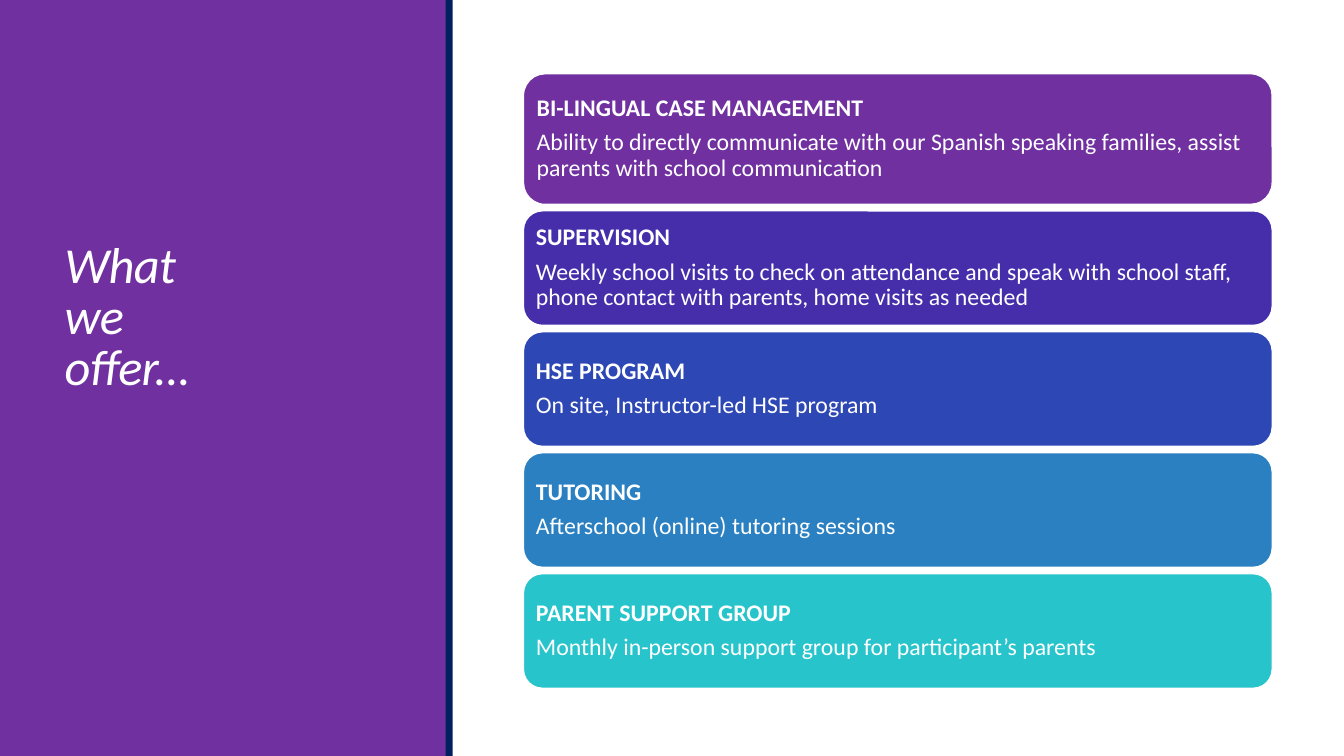
from dataclasses import dataclass

from pptx import Presentation
from pptx.dml.color import RGBColor
from pptx.enum.shapes import MSO_SHAPE
from pptx.enum.text import MSO_ANCHOR, MSO_AUTO_SIZE, PP_ALIGN
from pptx.oxml.ns import qn
from pptx.util import Inches, Pt


@dataclass(frozen=True)
class Theme:
    font: str = "Calibri"
    purple: str = "7030A0"
    navy: str = "002060"
    white: str = "FFFFFF"
    card_fills: tuple = ("7030A0", "462EAB", "2D47B5", "2A80C1", "28C4CC")
    title_size: int = 36
    card_size: int = 17


THEME = Theme()

OFFERS = [
    ("BI-LINGUAL CASE MANAGEMENT",
     "Ability to directly communicate with our Spanish speaking families, "
     "assist parents with school communication"),
    ("SUPERVISION",
     "Weekly school visits to check on attendance and speak with school staff, "
     "phone contact with parents, home visits as needed"),
    ("HSE PROGRAM", "On site, Instructor-led HSE program"),
    ("TUTORING", "Afterschool (online) tutoring sessions"),
    ("PARENT SUPPORT GROUP",
     "Monthly in-person support group for participant’s parents"),
]

CARD_LEFT, CARD_TOP, CARD_WIDTH = 5.19, 0.73, 7.43
FIRST_CARD_HEIGHT, CARD_HEIGHT, CARD_GAP = 1.3, 1.14, 0.06
CARD_INSET = 0.07


def add_block(slide, preset, left, top, width, height, fill):
    shape = slide.shapes.add_shape(
        preset, Inches(left), Inches(top), Inches(width), Inches(height))
    shape.shadow.inherit = False
    shape.fill.solid()
    shape.fill.fore_color.rgb = RGBColor.from_string(fill)
    shape.line.fill.background()
    return shape


def format_paragraph(paragraph, size, line_spacing, bold=False, italic=False):
    paragraph.alignment = PP_ALIGN.LEFT
    paragraph.line_spacing = line_spacing
    font = paragraph.font
    font.name = THEME.font
    font.size = Pt(size)
    font.bold = bold
    font.italic = italic
    font.color.rgb = RGBColor.from_string(THEME.white)


def add_title(slide, text):
    title = slide.shapes.title
    title.left, title.top = Inches(0.54), Inches(0.57)
    title.width, title.height = Inches(3.37), Inches(5.19)
    frame = title.text_frame
    frame.text = text
    frame.word_wrap = True
    frame.auto_size = MSO_AUTO_SIZE.NONE
    frame.vertical_anchor = MSO_ANCHOR.MIDDLE
    paragraph = frame.paragraphs[0]
    format_paragraph(paragraph, THEME.title_size, 0.85, italic=True)
    paragraph._p.pPr.find(qn("a:defRPr")).set("spc", "-50")
    return title


def add_card(slide, top, height, fill, heading, detail):
    card = add_block(slide, MSO_SHAPE.ROUNDED_RECTANGLE,
                     CARD_LEFT, top, CARD_WIDTH, height, fill)
    card.line.color.rgb = RGBColor.from_string(THEME.white)
    card.line.width = Pt(1.25)
    frame = card.text_frame
    frame.word_wrap = True
    frame.vertical_anchor = MSO_ANCHOR.MIDDLE
    frame.margin_left = frame.margin_right = Inches(CARD_INSET)
    frame.margin_top = frame.margin_bottom = Inches(CARD_INSET)
    frame.text = f"{heading}\n{detail}"
    heading_paragraph, detail_paragraph = frame.paragraphs
    format_paragraph(heading_paragraph, THEME.card_size, 0.9, bold=True)
    heading_paragraph.space_after = Pt(6)
    format_paragraph(detail_paragraph, THEME.card_size, 0.9)


def add_cards(slide):
    top = CARD_TOP
    for index, (fill, offer) in enumerate(zip(THEME.card_fills, OFFERS)):
        height = CARD_HEIGHT if index else FIRST_CARD_HEIGHT
        add_card(slide, top, height, fill, *offer)
        top += height + CARD_GAP


def main():
    presentation = Presentation()
    presentation.slide_width = Inches(13.33)
    presentation.slide_height = Inches(7.5)
    slide = presentation.slides.add_slide(presentation.slide_layouts[5])

    panel = add_block(slide, MSO_SHAPE.RECTANGLE, 0, 0, 4.43, 7.5, THEME.purple)
    title = add_title(slide, "What\vwe\voffer...")
    panel.element.addnext(title.element)
    add_block(slide, MSO_SHAPE.RECTANGLE, 4.42, 0, 0.07, 7.5, THEME.navy)
    add_cards(slide)

    presentation.save("out.pptx")


if __name__ == "__main__":
    main()
